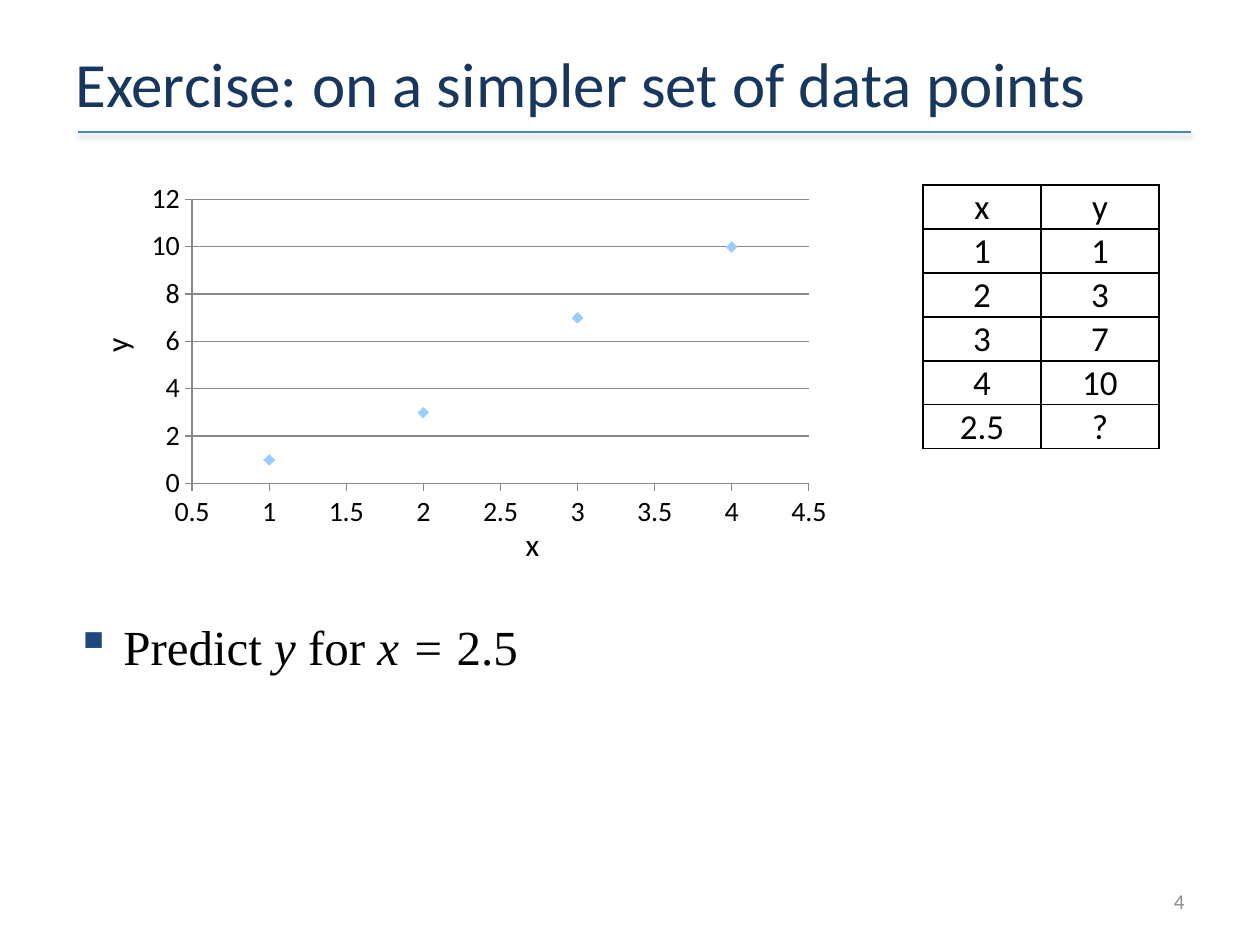
from lxml import etree
from pptx import Presentation
from pptx.chart.data import XyChartData
from pptx.dml.color import RGBColor
from pptx.enum.chart import XL_CHART_TYPE, XL_MARKER_STYLE, XL_TICK_MARK
from pptx.enum.shapes import MSO_CONNECTOR
from pptx.enum.text import MSO_ANCHOR, PP_ALIGN
from pptx.oxml import parse_xml
from pptx.oxml.ns import nsdecls, qn
from pptx.util import Emu, Pt

COLORS = {"title": "17375E", "rule": "4F81BD", "bullet": "1F497D", "text": "000000",
          "number": "8C8C8C", "grid": "878787", "marker": "99CCFF"}
SANS, SERIF = "Calibri", "Times New Roman"

TITLE = "Exercise: on a simpler set of data points"
TASK = [("Predict ", False), ("y ", True), ("for ", False), ("x = ", True), ("2.5", False)]
POINTS = [(1, 1), (2, 3), (3, 7), (4, 10)]
TABLE_ROWS = [("x", "y"), *POINTS, (2.5, "?")]
PAGE_NUMBER = "4"

TABLE_LEFT, TABLE_TOP, COLUMN_WIDTH, ROW_HEIGHT = 923, 185, 118, 44
PLOT_LAYOUT = {"x": 0.08, "y": 0.07, "w": 0.88, "h": 0.78}


def px(length):
    return Emu(round(length * 914400 / 126))


def color(name):
    return RGBColor.from_string(COLORS[name])


def write(frame, spans, size=18, font=SANS, fill="text", align=PP_ALIGN.LEFT,
          anchor=MSO_ANCHOR.TOP):
    """Fill the first paragraph with (text, italic) spans and return it."""
    frame.word_wrap = True
    frame.vertical_anchor = anchor
    para = frame.paragraphs[0]
    para.alignment = align
    for text, italic in spans:
        span = para.add_run()
        span.text = text
        span.font.size = Pt(size)
        span.font.name = font
        span.font.italic = italic
        span.font.color.rgb = color(fill)
    return para


def add_text(page, place, text, rotation=0, **style):
    box = page.shapes.add_textbox(*map(px, place))
    box.rotation = rotation
    spans = [(text, False)] if isinstance(text, str) else text
    return write(box.text_frame, spans, **style)


def add_bullet(para):
    properties = para._p.get_or_add_pPr()
    properties.set("marL", str(px(48)))
    properties.set("indent", str(-px(48)))
    bullet_color = etree.SubElement(properties, qn("a:buClr"))
    etree.SubElement(bullet_color, qn("a:srgbClr"), val=COLORS["bullet"])
    etree.SubElement(properties, qn("a:buChar"), char="▪")


def add_title_rule(page):
    rule = page.shapes.add_connector(MSO_CONNECTOR.STRAIGHT, px(78), px(132), px(1191), px(132))
    rule.line.color.rgb = color("rule")
    rule.line.width = Pt(1)
    rule._element.spPr.append(parse_xml(
        f'<a:effectLst {nsdecls("a")}><a:outerShdw blurRad="{Pt(3.1)}" dist="{Pt(1.6)}" '
        'dir="5400000" rotWithShape="0"><a:srgbClr val="000000"><a:alpha val="38000"/>'
        '</a:srgbClr></a:outerShdw></a:effectLst>'))


def style_axis(axis, low, high, step):
    axis.minimum_scale, axis.maximum_scale, axis.major_unit = low, high, step
    axis.major_tick_mark = XL_TICK_MARK.OUTSIDE
    axis.minor_tick_mark = XL_TICK_MARK.NONE
    axis.tick_labels.font.size = Pt(16)
    axis.tick_labels.number_format = "General"
    axis.tick_labels.number_format_is_linked = False
    axis.format.line.color.rgb = color("grid")
    axis.has_title = False


def add_scatter(page):
    data = XyChartData()
    points = data.add_series("Series 1")
    for x, y in POINTS:
        points.add_data_point(x, y)
    chart = page.shapes.add_chart(XL_CHART_TYPE.XY_SCATTER, px(136), px(174), px(701), px(364),
                                  data).chart
    chart.has_legend = chart.has_title = False
    chart.font.name, chart.font.size = SANS, Pt(10)
    chart.font.color.rgb = color("text")
    style_axis(chart.category_axis, 0.5, 4.5, 0.5)
    style_axis(chart.value_axis, 0, 12, 2)
    chart.category_axis.has_major_gridlines = False
    chart.value_axis.major_gridlines.format.line.color.rgb = color("grid")

    plot = chart.plots[0]
    plot.vary_by_categories = False
    series = plot.series[0]
    series.smooth = False
    series.format.line.fill.background()
    series.marker.style = XL_MARKER_STYLE.DIAMOND
    series.marker.size = 6
    series.marker.format.fill.solid()
    series.marker.format.fill.fore_color.rgb = color("marker")
    series.marker.format.line.fill.background()

    area = chart._chartSpace.chart.plotArea
    for old in area.findall(qn("c:layout")):
        area.remove(old)
    sizes = "".join(f'<c:{key} val="{value}"/>' for key, value in PLOT_LAYOUT.items())
    area.insert(0, parse_xml(
        f'<c:layout {nsdecls("c")}><c:manualLayout><c:layoutTarget val="inner"/>'
        f'<c:xMode val="edge"/><c:yMode val="edge"/>{sizes}</c:manualLayout></c:layout>'))


def add_borders(cell):
    properties = cell._tc.get_or_add_tcPr()
    for position, side in enumerate(("lnL", "lnR", "lnT", "lnB")):
        properties.insert(position, parse_xml(
            f'<a:{side} {nsdecls("a")} w="{Pt(1)}"><a:solidFill>'
            f'<a:srgbClr val="{COLORS["text"]}"/></a:solidFill></a:{side}>'))


def add_data_table(page):
    columns, rows = len(TABLE_ROWS[0]), len(TABLE_ROWS)
    table = page.shapes.add_table(rows, columns, px(TABLE_LEFT), px(TABLE_TOP),
                                  px(columns * COLUMN_WIDTH), px(rows * ROW_HEIGHT)).table
    table.first_row = table.horz_banding = False
    for row, values in enumerate(TABLE_ROWS):
        for column, value in enumerate(values):
            cell = table.cell(row, column)
            cell.margin_left = cell.margin_right = cell.margin_top = px(1)
            cell.margin_bottom = 0
            cell.fill.background()
            write(cell.text_frame, [(str(value), False)], size=20, align=PP_ALIGN.CENTER)
            cell.vertical_anchor = MSO_ANCHOR.BOTTOM
            add_borders(cell)


def main():
    deck = Presentation()
    deck.slide_width, deck.slide_height = px(1260), px(945)
    page = deck.slides.add_slide(deck.slide_layouts[6])
    add_title_rule(page)
    add_text(page, (63, 38, 1134, 89), TITLE, size=36, fill="title", anchor=MSO_ANCHOR.MIDDLE)
    task = add_text(page, (63, 610, 1134, 234), TASK, size=28, font=SERIF)
    task.space_before = Pt(5.6)
    add_bullet(task)
    add_text(page, (903, 876, 294, 50), PAGE_NUMBER, size=12, fill="number",
             align=PP_ALIGN.RIGHT, anchor=MSO_ANCHOR.MIDDLE)
    add_scatter(page)
    add_text(page, (-44, 319, 323, 53), "y", rotation=270, align=PP_ALIGN.CENTER)
    add_text(page, (324, 519, 417, 53), "x", align=PP_ALIGN.CENTER)
    add_data_table(page)
    deck.save("out.pptx")


if __name__ == "__main__":
    main()
